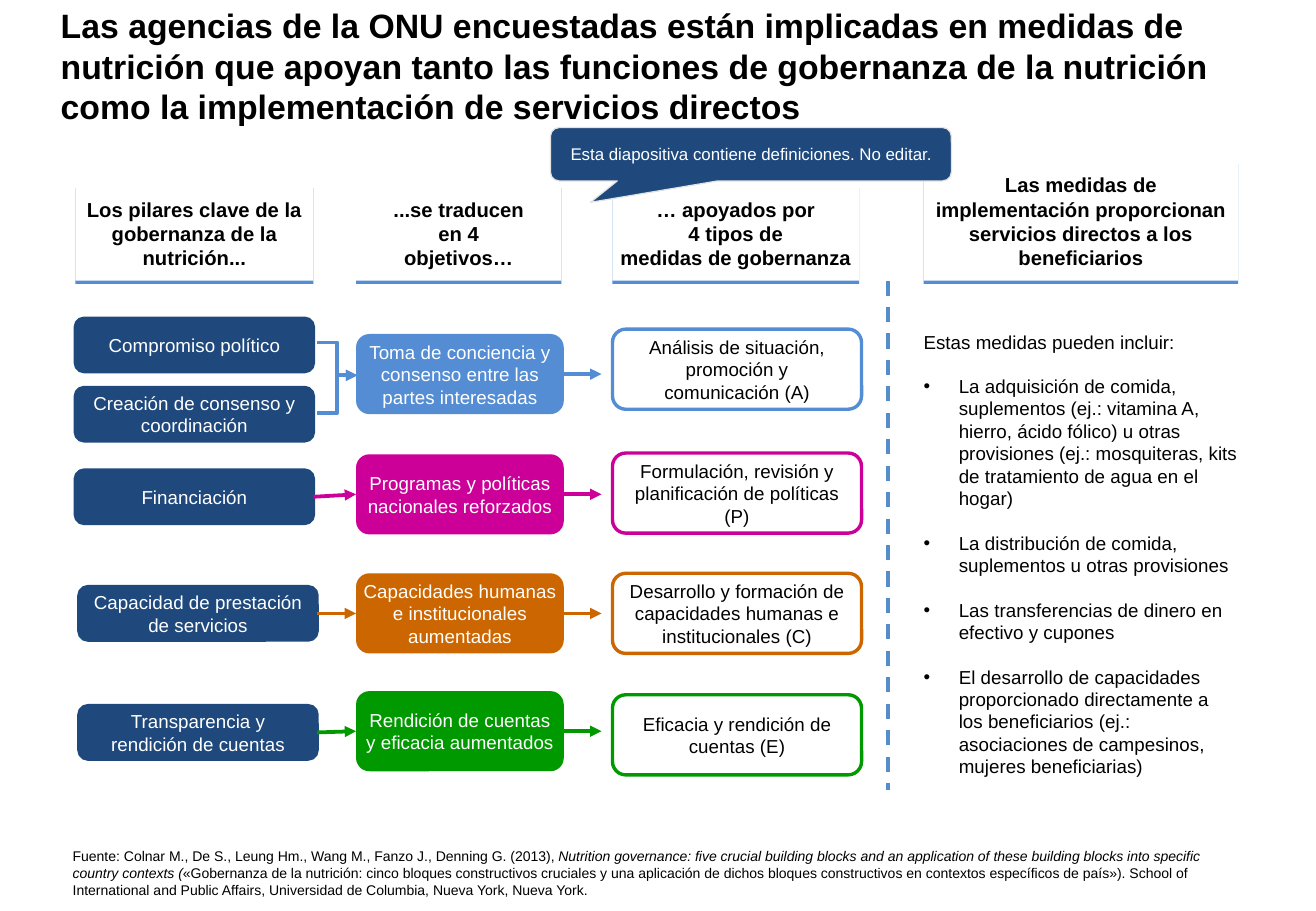
from lxml import etree
from pptx import Presentation
from pptx.dml.color import RGBColor
from pptx.enum.dml import MSO_LINE
from pptx.enum.shapes import MSO_CONNECTOR, MSO_SHAPE
from pptx.enum.text import MSO_ANCHOR, PP_ALIGN
from pptx.oxml.ns import qn
from pptx.util import Pt

PX = 9144  # 100 px to the inch
FONT = "Arial"
RECT, ROUND = MSO_SHAPE.RECTANGLE, MSO_SHAPE.ROUNDED_RECTANGLE
CALLOUT = MSO_SHAPE.ROUNDED_RECTANGULAR_CALLOUT
STRAIGHT, ELBOW = MSO_CONNECTOR.STRAIGHT, MSO_CONNECTOR.ELBOW
DASH = MSO_LINE.DASH
LEFT, CENTER = PP_ALIGN.LEFT, PP_ALIGN.CENTER
TOP, MIDDLE, BOTTOM = MSO_ANCHOR.TOP, MSO_ANCHOR.MIDDLE, MSO_ANCHOR.BOTTOM
SIDE_LEFT, SIDE_RIGHT = 1, 3

BLACK = RGBColor(0x00, 0x00, 0x00)
WHITE = RGBColor(0xFF, 0xFF, 0xFF)
NAVY = RGBColor(0x1F, 0x49, 0x7D)
BLUE = RGBColor(0x54, 0x8D, 0xD4)
DIVIDER_BLUE = RGBColor(0x54, 0x8D, 0xCA)
MAGENTA = RGBColor(0xCC, 0x00, 0x99)
ORANGE = RGBColor(0xCC, 0x66, 0x00)
GREEN = RGBColor(0x00, 0x99, 0x00)
PALE_GRAY = RGBColor(0xE2, 0xE2, 0xE2)

BODY_SIZE = 11.1
TITLE = ("Las agencias de la ONU encuestadas están implicadas en medidas de nutrición que apoyan "
         "tanto las funciones de gobernanza de la nutrición como la implementación de servicios directos")

# left, top, width, height, side inset, text
HEADINGS = [
    (62, 152, 196, 79, 4, "Los pilares clave de la gobernanza de la nutrición..."),
    (293, 152, 169, 79, 10, "...se traducen\nen 4\vobjetivos…"),
    (504, 152, 203, 79, 0, "… apoyados por\n4 tipos de\nmedidas de gobernanza"),
    (760, 132, 259, 99, 6,
     "Las medidas de implementación proporcionan servicios directos a los beneficiarios"),
]
# left, top, text
PILLARS = [
    (62, 262, "Compromiso político"),
    (62, 319, "Creación de consenso y coordinación"),
    (62, 387, "Financiación"),
    (65, 483, "Capacidad de prestación de servicios"),
    (65, 581, "Transparencia y rendición de cuentas"),
]
# color, objective top, objective inset, objective, measure top, measure
ROWS = [
    (BLUE, 275, 0, "Toma de conciencia y consenso entre las partes interesadas",
     271, "Análisis de situación, promoción y comunicación (A)"),
    (MAGENTA, 374, 0, "Programas y políticas nacionales reforzados",
     373, "Formulación, revisión y planificación de políticas (P)"),
    (ORANGE, 472, 0, "Capacidades humanas e institucionales aumentadas",
     472, "Desarrollo y formación de capacidades humanas e institucionales (C)"),
    (GREEN, 569, 5, "Rendición de cuentas y eficacia aumentados",
     572, "Eficacia y rendición de cuentas (E)"),
]
SERVICES_INTRO = "Estas medidas pueden incluir:"
SERVICES = [
    "La adquisición de comida, suplementos (ej.: vitamina A, hierro, ácido fólico) u otras "
    "provisiones (ej.: mosquiteras, kits de tratamiento de agua en el hogar)",
    "La distribución de comida, suplementos u otras provisiones",
    "Las transferencias de dinero en efectivo y cupones",
    "El desarrollo de capacidades proporcionado directamente a los beneficiarios "
    "(ej.: asociaciones de campesinos, mujeres beneficiarias)",
]
# text, italic
SOURCE = [
    ("Fuente: Colnar M., De S., Leung Hm., Wang M., Fanzo J., Denning G. (2013), ", False),
    ("Nutrition governance: five crucial building blocks and an application of these building "
     "blocks into specific country contexts (", True),
    ("«Gobernanza de la nutrición: cinco bloques constructivos cruciales y una aplicación de "
     "dichos bloques constructivos en contextos específicos de país»). School of International "
     "and Public Affairs, Universidad de Columbia, Nueva York, Nueva York.", False),
]


def scaled(*lengths):
    return [length * PX for length in lengths]


def style_text(shape, size, color=BLACK, bold=False, align=LEFT, anchor=TOP, insets=(10, 5)):
    """Format the text already in a shape; insets are side and top/bottom."""
    frame = shape.text_frame
    frame.word_wrap = True
    frame.vertical_anchor = anchor
    frame.margin_left = frame.margin_right = insets[0] * PX
    frame.margin_top = frame.margin_bottom = insets[1] * PX
    for para in frame.paragraphs:
        para.alignment = align
        for span in para.runs:
            span.font.name = FONT
            span.font.size = Pt(size)
            span.font.bold = bold
            span.font.color.rgb = color


def add_text(page, bounds, text, size, **style):
    box = page.shapes.add_textbox(*scaled(*bounds))
    box.text_frame.text = text
    style_text(box, size, **style)
    return box


def add_box(page, kind, bounds, text, fill, line=None, line_width=2, size=BODY_SIZE, **style):
    box = page.shapes.add_shape(kind, *scaled(*bounds))
    box.shadow.inherit = False
    box.fill.solid()
    box.fill.fore_color.rgb = fill
    if line is None:
        box.line.fill.background()
    else:
        box.line.color.rgb = line
        box.line.width = Pt(line_width)
    box.text_frame.text = text
    style_text(box, size, align=CENTER, **style)
    return box


def add_heading(page, left, top, width, height, inset, text):
    """A heading underlined by a hard blue shadow."""
    box = add_box(page, RECT, (left, top, width, height), text, WHITE, size=12,
                  bold=True, anchor=BOTTOM, insets=(inset, 9))
    effects = box._element.spPr.find(qn("a:effectLst"))
    shadow = etree.SubElement(effects, qn("a:outerShdw"), blurRad="0", dist=str(Pt(2)),
                              dir="5400000", algn="t", rotWithShape="0")
    etree.SubElement(shadow, qn("a:srgbClr"), val=str(BLUE))


def add_line(page, kind, start, end, color, arrow=True):
    line = page.shapes.add_connector(kind, *scaled(*start, *end))
    line.line.color.rgb = color
    line.line.width = Pt(2.25)
    if arrow:
        etree.SubElement(line.line._get_or_add_ln(), qn("a:tailEnd"), type="triangle")
    etree.SubElement(line._element.spPr, qn("a:effectLst"))
    return line


def add_services(page):
    box = add_text(page, (760, 267, 259, 383), "\n".join([SERVICES_INTRO, *SERVICES]),
                   BODY_SIZE, insets=(0, 5))
    paras = box.text_frame.paragraphs
    for para in paras[:-1]:
        para.space_after = Pt(13)
    for para in paras[1:]:
        properties = para._p.get_or_add_pPr()
        properties.set("marL", str(29 * PX))
        properties.set("indent", str(-29 * PX))
        etree.SubElement(properties, qn("a:buFont"), typeface=FONT)
        etree.SubElement(properties, qn("a:buChar"), char="•")


def add_source(page):
    box = page.shapes.add_textbox(*scaled(50, 693, 987, 52))
    para = box.text_frame.paragraphs[0]
    for text, italic in SOURCE:
        span = para.add_run()
        span.text = text
        span.font.italic = italic
    style_text(box, 8.3)


def add_flow(page):
    """Pillars, objectives and measures with the arrows between them."""
    pillars = [add_box(page, ROUND, (left, top, 196, 44), text, NAVY, NAVY,
                       color=WHITE, anchor=MIDDLE) for left, top, text in PILLARS]
    objectives = []
    for color, top, inset, objective, measure_top, measure in ROWS:
        box = add_box(page, ROUND, (293, top, 171, 66), objective, color,
                      color=WHITE, anchor=MIDDLE, insets=(inset, 9))
        objectives.append(box)
        add_box(page, ROUND, (504, measure_top, 205, 66), measure, WHITE, color,
                anchor=MIDDLE, insets=(8, 9))
        middle = top + 33
        arrow = add_line(page, STRAIGHT, (464, middle), (495, middle), color)
        arrow.begin_connect(box, SIDE_RIGHT)
    for start_y in (282, 340):
        add_line(page, ELBOW, (261, start_y), (294, 309), BLUE)
    for pillar, objective, row in zip(pillars[2:], objectives[1:], ROWS[1:]):
        arrow = add_line(page, STRAIGHT, (258, row[1]), (293, row[1]), row[0])
        arrow.begin_connect(pillar, SIDE_RIGHT)
        arrow.end_connect(objective, SIDE_LEFT)


def main():
    deck = Presentation()
    deck.slide_width, deck.slide_height = scaled(1083, 750)
    page = deck.slides.add_slide(deck.slide_layouts[6])
    add_text(page, (50, 18, 983, 91), TITLE, 20, bold=True, anchor=BOTTOM, insets=(0, 5))
    for heading in HEADINGS:
        add_heading(page, *heading)
    add_flow(page)
    divider = add_line(page, STRAIGHT, (731, 231), (731, 650), DIVIDER_BLUE, arrow=False)
    divider.line.dash_style = DASH
    callout = add_box(page, CALLOUT, (453, 105, 330, 44),
                      "Esta diapositiva contiene definiciones. No editar.", NAVY, PALE_GRAY,
                      0.75, 10, color=WHITE, anchor=MIDDLE, insets=(10, 10))
    callout.adjustments[0] = -0.4
    callout.adjustments[1] = 0.9
    add_services(page)
    add_source(page)
    deck.save("out.pptx")


if __name__ == "__main__":
    main()
